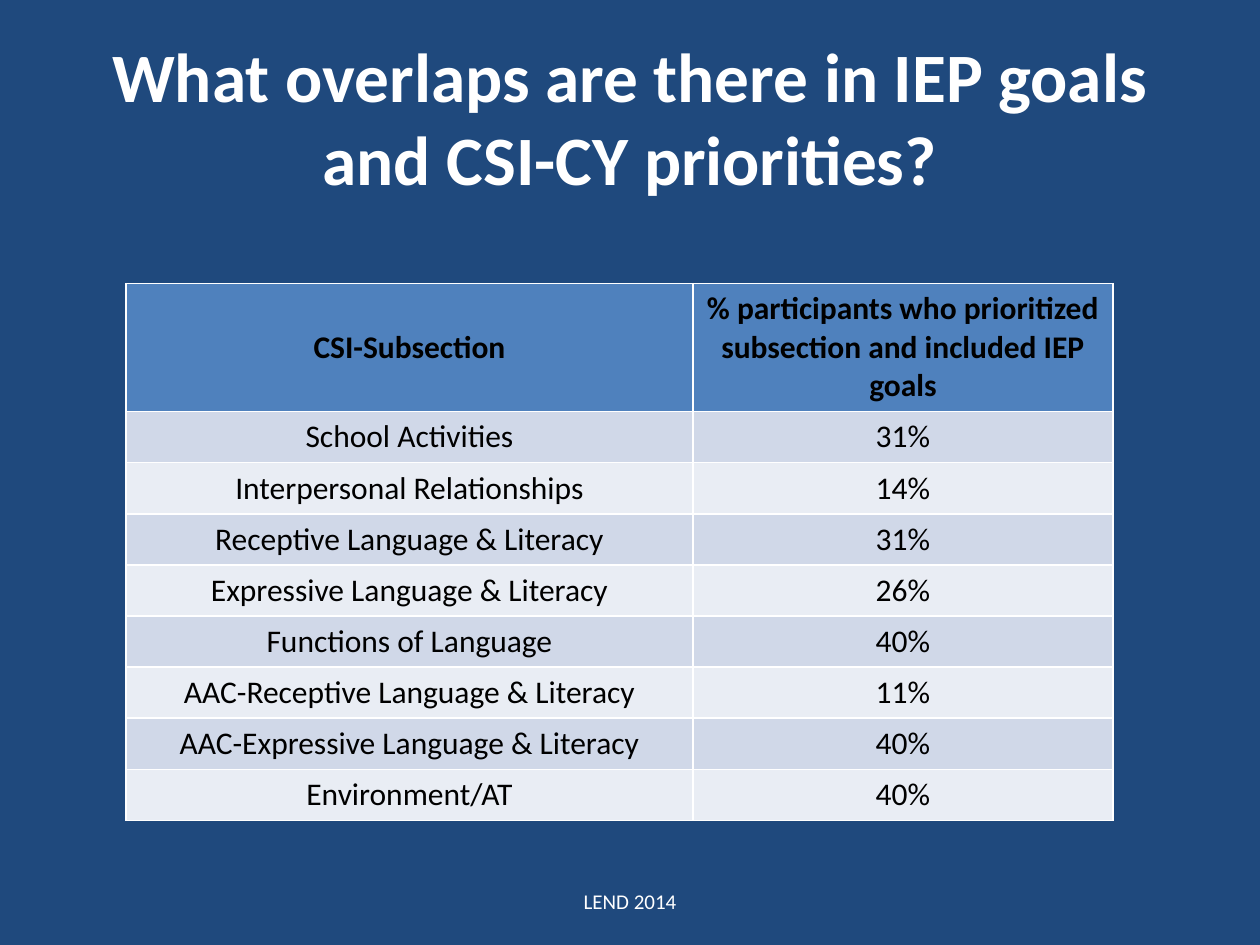
from lxml import etree
from pptx import Presentation
from pptx.dml.color import RGBColor
from pptx.enum.text import MSO_ANCHOR, PP_ALIGN
from pptx.oxml.ns import qn
from pptx.util import Pt

CENTER = PP_ALIGN.CENTER
MIDDLE = MSO_ANCHOR.MIDDLE

NAVY = RGBColor(0x1F, 0x49, 0x7D)
WHITE = RGBColor(0xFF, 0xFF, 0xFF)
BLACK = RGBColor(0x00, 0x00, 0x00)
HEADER_BLUE = RGBColor(0x4F, 0x81, 0xBD)
BAND_DARK = RGBColor(0xD0, 0xD8, 0xE8)
BAND_LIGHT = RGBColor(0xE9, 0xED, 0xF4)

HEADERS = ("CSI-Subsection",
           "% participants who prioritized subsection and included IEP goals")
OVERLAPS = (
    ("School Activities", "31%"),
    ("Interpersonal Relationships", "14%"),
    ("Receptive Language & Literacy", "31%"),
    ("Expressive Language & Literacy", "26%"),
    ("Functions of Language", "40%"),
    ("AAC-Receptive Language & Literacy", "11%"),
    ("AAC-Expressive Language & Literacy", "40%"),
    ("Environment/AT", "40%"),
)


class SlideBuilder:
    """Holds the slide and its style; all lengths are in points."""

    font = "Calibri"
    border_width = 1

    def __init__(self, slide, background):
        self.slide = slide
        fill = slide.background.fill
        fill.solid()
        fill.fore_color.rgb = background

    def set_text(self, text_frame, text, size, color, bold=False):
        text_frame.text = text
        text_frame.word_wrap = True
        paragraph = text_frame.paragraphs[0]
        paragraph.alignment = CENTER
        font = paragraph.runs[0].font
        font.name, font.size, font.bold = self.font, Pt(size), bold
        font.color.rgb = color

    def text(self, left, top, width, height, text, size, bold=False):
        box = self.slide.shapes.add_textbox(
            Pt(left), Pt(top), Pt(width), Pt(height))
        box.text_frame.vertical_anchor = MIDDLE
        self.set_text(box.text_frame, text, size, WHITE, bold)

    def border(self, cell, color):
        properties = cell._tc.get_or_add_tcPr()
        for index, side in enumerate(("a:lnL", "a:lnR", "a:lnT", "a:lnB")):
            line = etree.Element(qn(side), w=str(Pt(self.border_width)))
            fill = etree.SubElement(line, qn("a:solidFill"))
            etree.SubElement(fill, qn("a:srgbClr"), val=str(color))
            properties.insert(index, line)

    def table(self, left, top, column_widths, header_height, row_height,
              rows, size):
        heights = [header_height] + [row_height] * (len(rows) - 1)
        table = self.slide.shapes.add_table(
            len(rows), len(column_widths), Pt(left), Pt(top),
            Pt(sum(column_widths)), Pt(sum(heights))).table
        for column, width in zip(table.columns, column_widths):
            column.width = Pt(width)
        for index, (row, height, values) in enumerate(
                zip(table.rows, heights, rows)):
            row.height = Pt(height)
            is_header = index == 0
            band = BAND_DARK if index % 2 else BAND_LIGHT
            for cell, value in zip(row.cells, values):
                cell.vertical_anchor = MIDDLE
                cell.fill.solid()
                cell.fill.fore_color.rgb = HEADER_BLUE if is_header else band
                self.border(cell, WHITE)
                self.set_text(cell.text_frame, value, size, BLACK, is_header)


def main():
    presentation = Presentation()
    presentation.slide_width = Pt(720)
    presentation.slide_height = Pt(540)
    slide = presentation.slides.add_slide(presentation.slide_layouts[6])
    builder = SlideBuilder(slide, NAVY)

    # Title
    builder.text(36, 21.6, 648, 90,
                 "What overlaps are there in IEP goals and CSI-CY priorities?",
                 39.6, bold=True)

    # Overlap table
    builder.table(72, 162, (324, 240), 73.2, 29.2, (HEADERS, *OVERLAPS), 18)

    # Footer
    builder.text(246, 500.5, 228, 28.8, "LEND 2014", 12)

    presentation.save("out.pptx")


if __name__ == "__main__":
    main()
